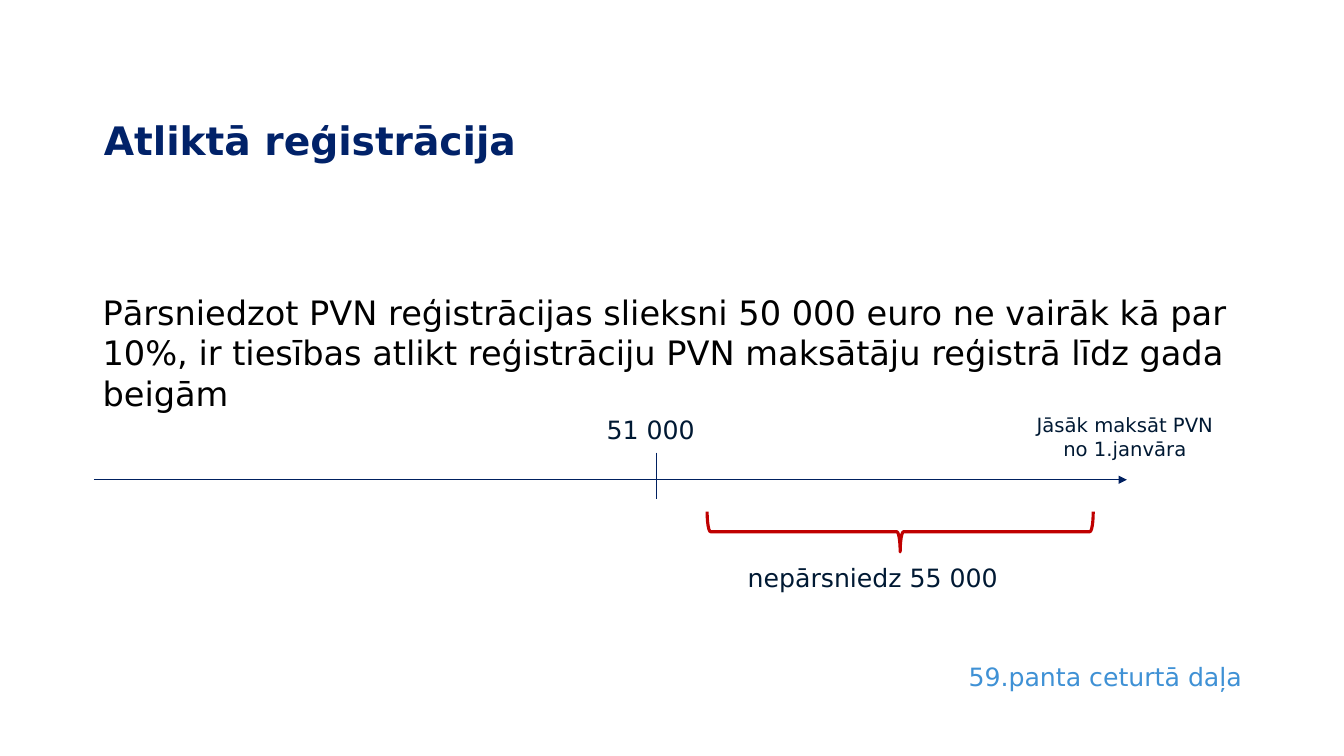
from dataclasses import dataclass

from lxml.etree import SubElement
from pptx import Presentation
from pptx.dml.color import RGBColor
from pptx.enum.shapes import MSO_CONNECTOR, MSO_SHAPE
from pptx.enum.text import MSO_ANCHOR, MSO_AUTO_SIZE, PP_ALIGN
from pptx.oxml.ns import qn
from pptx.shapes.base import BaseShape
from pptx.slide import Slide
from pptx.util import Pt

FONT = "DejaVu Sans"
TITLE = RGBColor(0x01, 0x22, 0x69)
BLACK = RGBColor(0x00, 0x00, 0x00)
BLUE = RGBColor(0x3F, 0x91, 0xD5)
NAVY = RGBColor(0x00, 0x20, 0x60)
INK = RGBColor(0x00, 0x19, 0x33)
RED = RGBColor(0xC0, 0x00, 0x00)


@dataclass(frozen=True)
class Label:
    text: str
    left: float
    top: float
    width: float
    height: float
    size: float = 18
    color: RGBColor = INK
    align: PP_ALIGN = PP_ALIGN.LEFT
    inset: float = 3.6


@dataclass(frozen=True)
class Rule:
    x1: float
    y1: float
    x2: float
    y2: float
    arrow: bool = False


LABELS = [
    Label("Pārsniedzot PVN reģistrācijas slieksni 50 000 euro ne vairāk kā par "
          "10%, ir tiesības atlikt reģistrāciju PVN maksātāju reģistrā līdz "
          "gada beigām", 66.2, 165.6, 828, 328.3, size=24, color=BLACK, inset=43),
    Label("59.panta ceturtā daļa", 684.7, 468.7, 215.3, 28.8, color=BLUE),
    Label("51 000", 426.2, 292.3, 100.8, 28.8),
    Label("Jāsāk maksāt PVN\nno 1.janvāra", 730.1, 291.6, 146.9, 41,
          size=14, align=PP_ALIGN.CENTER),
    Label("nepārsniedz 55 000", 527, 398.2, 219.6, 28.8),
]

RULES = [
    Rule(67, 342.7, 805, 342.7, arrow=True),
    Rule(468.7, 323.3, 468.7, 356.4),
]


def place(shape: BaseShape, left: float, top: float,
          width: float, height: float) -> None:
    shape.left, shape.top = Pt(left), Pt(top)
    shape.width, shape.height = Pt(width), Pt(height)


def write(shape: BaseShape, text: str, *, size: float, color: RGBColor,
          bold: bool = False, align: PP_ALIGN = PP_ALIGN.LEFT,
          anchor: MSO_ANCHOR = MSO_ANCHOR.TOP, inset: float = 3.6,
          space: float = 1.0) -> None:
    frame = shape.text_frame
    frame.text = text
    frame.word_wrap = True
    frame.auto_size = MSO_AUTO_SIZE.NONE
    frame.vertical_anchor = anchor
    frame.margin_top = Pt(inset)
    for para in frame.paragraphs:
        para.alignment = align
        para.line_spacing = space
        for run in para.runs:
            font = run.font
            font.name, font.size, font.bold = FONT, Pt(size), bold
            font.color.rgb = color


def add_label(slide: Slide, label: Label) -> None:
    box = slide.shapes.add_textbox(Pt(label.left), Pt(label.top),
                                   Pt(label.width), Pt(label.height))
    write(box, label.text, size=label.size, color=label.color,
          align=label.align, inset=label.inset)


def add_rule(slide: Slide, rule: Rule) -> None:
    line = slide.shapes.add_connector(MSO_CONNECTOR.STRAIGHT, Pt(rule.x1),
                                      Pt(rule.y1), Pt(rule.x2), Pt(rule.y2))
    line.line.color.rgb = NAVY
    line.line.width = Pt(0.5)
    if rule.arrow:
        SubElement(line.line._get_or_add_ln(), qn("a:tailEnd"), type="triangle")
    SubElement(line._element.spPr, qn("a:effectLst"))


def add_brace(slide: Slide) -> None:
    brace = slide.shapes.add_shape(MSO_SHAPE.RIGHT_BRACE, Pt(628.6), Pt(241.9),
                                   Pt(28.8), Pt(275.8))
    brace.rotation = 90
    brace.shadow.inherit = False
    brace.fill.background()
    brace.line.color.rgb = RED
    brace.line.width = Pt(2.25)


def main() -> None:
    deck = Presentation()
    deck.slide_width, deck.slide_height = Pt(960), Pt(540)
    slide = deck.slides.add_slide(deck.slide_layouts[5])

    # Title
    title = slide.shapes.title
    place(title, 67, 49.7, 657.4, 104.4)
    write(title, "Atliktā reģistrācija", size=28, color=TITLE, bold=True,
          anchor=MSO_ANCHOR.MIDDLE, space=0.9)

    # Timeline with its limit brace
    for rule in RULES:
        add_rule(slide, rule)
    add_brace(slide)

    # Statement, source and timeline labels
    for label in LABELS:
        add_label(slide, label)

    deck.save("out.pptx")


if __name__ == "__main__":
    main()
